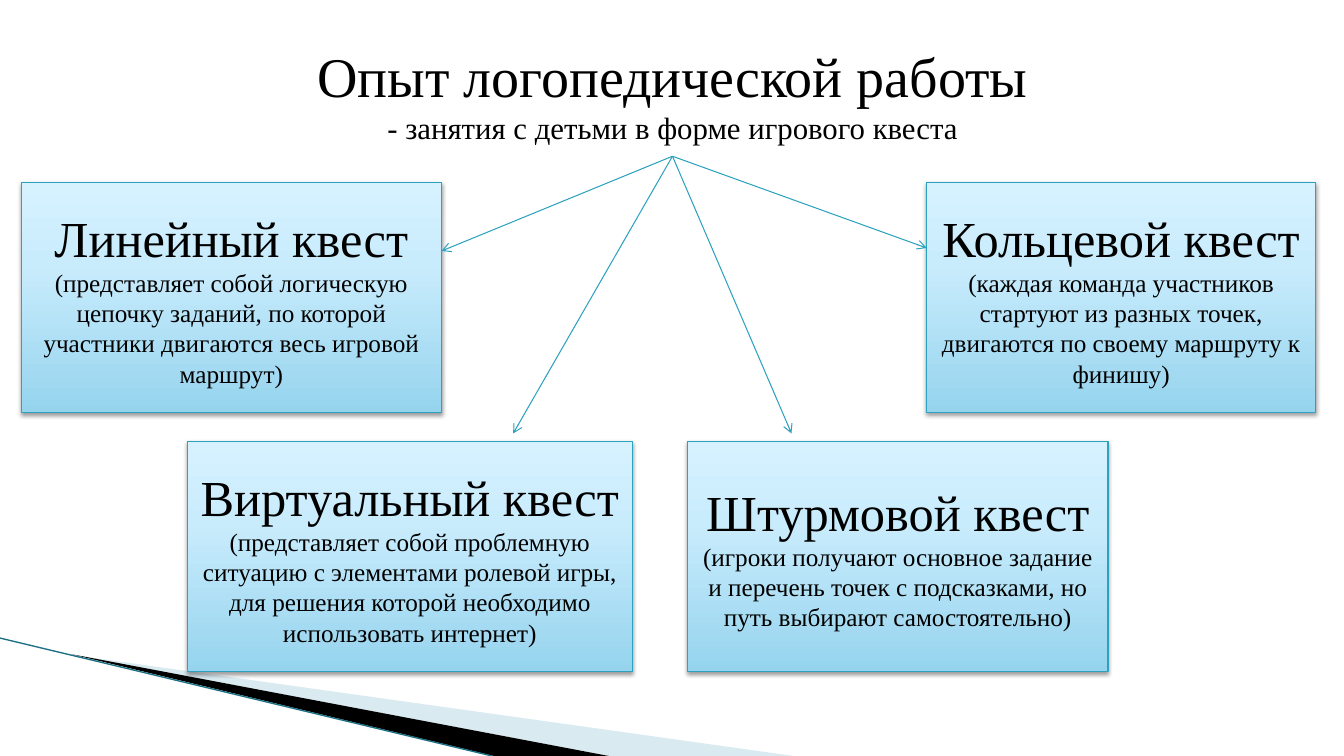
from dataclasses import dataclass

from lxml import etree
from pptx import Presentation
from pptx.dml.color import RGBColor
from pptx.enum.shapes import MSO_CONNECTOR, MSO_SHAPE
from pptx.enum.text import MSO_ANCHOR, PP_ALIGN
from pptx.oxml import parse_xml
from pptx.oxml.ns import nsdecls, qn
from pptx.util import Pt

PX = 9144  # EMU per px, 100 px to the inch
RECT = MSO_SHAPE.RECTANGLE
LINE = MSO_CONNECTOR.STRAIGHT
MIDDLE = MSO_ANCHOR.MIDDLE
CENTER = PP_ALIGN.CENTER
FONT = "Times New Roman"
BLACK = "000000"
TEAL = "2DA2BF"
STOPS = ((0, "96D4EE"), (65, "C9ECFC"), (100, "D7F2FF"))


@dataclass
class Quest:
    left: int
    top: int
    width: int
    name: str
    note: str
    tip: tuple[int, int]  # where the arrow to this quest ends


@dataclass
class Wedge:
    points: list[tuple[int, int]]
    fill: str
    alpha: int


HIGH = 228
START = (667, 155)
QUESTS = [
    Quest(21, 181, 417, "Линейный квест",
          "(представляет собой логическую цепочку заданий, по которой "
          "участники двигаются весь игровой маршрут)", (438, 249)),
    Quest(919, 181, 386, "Кольцевой квест",
          "(каждая команда участников стартуют из разных точек, "
          "двигаются по своему маршруту к финишу)", (919, 246)),
    Quest(682, 438, 417, "Штурмовой квест",
          "(игроки получают основное задание и перечень точек с подсказками, "
          "но путь выбирают самостоятельно)", (785, 430)),
    Quest(186, 438, 441, "Виртуальный квест",
          "(представляет собой проблемную ситуацию с элементами ролевой игры, "
          "для решения которой необходимо использовать интернет)", (509, 430)),
]
WEDGES = [
    Wedge([(73, 650), (787, 750), (604, 750)], "A0CBDC", 40),
    Wedge([(71, 649), (604, 750), (490, 750)], BLACK, 100),
]


def color(code: str) -> RGBColor:
    return RGBColor.from_string(code)


def write(shape, lines: list[tuple[str, int]]) -> None:
    frame = shape.text_frame
    frame.word_wrap = True
    frame.vertical_anchor = MIDDLE
    for i, (text, size) in enumerate(lines):
        para = frame.add_paragraph() if i else frame.paragraphs[0]
        para.text = text
        para.alignment = CENTER
        para.font.name = FONT
        para.font.size = Pt(size)
        para.font.color.rgb = color(BLACK)


def draw_wedge(shapes, wedge: Wedge) -> None:
    first, *rest = wedge.points
    pen = shapes.build_freeform(*first, scale=PX)
    pen.add_line_segments(rest)
    shape = pen.convert_to_shape()
    shape.shadow.inherit = False
    shape.line.fill.background()
    shape.fill.solid()
    shape.fill.fore_color.rgb = color(wedge.fill)
    if wedge.alpha < 100:
        tint = shape.fill._xPr.find(".//" + qn("a:srgbClr"))
        etree.SubElement(tint, qn("a:alpha"), val=str(wedge.alpha * 1000))


def draw_line(shapes, start: tuple[int, int], end: tuple[int, int],
              code: str, width: float, arrow: bool) -> None:
    line = shapes.add_connector(LINE, *(n * PX for n in start + end))
    line.line.color.rgb = color(code)
    line.line.width = Pt(width)
    if arrow:
        etree.SubElement(line.line._get_or_add_ln(), qn("a:tailEnd"), type="arrow")
    etree.SubElement(line._element.spPr, qn("a:effectLst"))


def draw_quest(shapes, quest: Quest) -> None:
    box = shapes.add_shape(RECT, quest.left * PX, quest.top * PX,
                           quest.width * PX, HIGH * PX)
    box.line.color.rgb = color(TEAL)
    box.line.width = Pt(0.75)
    # Gradient runs from the bottom up
    stops = "".join(f'<a:gs pos="{pos * 1000}"><a:srgbClr val="{code}"/></a:gs>'
                    for pos, code in STOPS)
    box.line._get_or_add_ln().addprevious(parse_xml(
        f'<a:gradFill {nsdecls("a")} rotWithShape="1"><a:gsLst>{stops}</a:gsLst>'
        '<a:lin ang="16200000" scaled="0"/></a:gradFill>'))
    # Soft shadow below the box
    box.shadow.inherit = False
    box._element.spPr.find(qn("a:effectLst")).append(parse_xml(
        f'<a:outerShdw {nsdecls("a")} blurRad="{Pt(3.1)}" dist="{Pt(1.6)}" '
        f'dir="5400000" rotWithShape="0"><a:srgbClr val="{BLACK}">'
        '<a:alpha val="38000"/></a:srgbClr></a:outerShdw>'))
    write(box, [(quest.name, 36), (quest.note, 18)])


def main() -> None:
    deck = Presentation()
    deck.slide_width, deck.slide_height = 1333 * PX, 750 * PX
    shapes = deck.slides.add_slide(deck.slide_layouts[6]).shapes

    # Corner decoration
    for wedge in WEDGES:
        draw_wedge(shapes, wedge)
    draw_line(shapes, (0, 633), (488, 750), "1B7083", 0.95, False)

    # Title
    title = shapes.add_textbox(67 * PX, 30 * PX, 1200 * PX, 125 * PX)
    write(title, [("Опыт логопедической работы", 40),
                  ("- занятия с детьми в форме игрового квеста", 22)])

    # Quest boxes, then arrows to them
    for quest in QUESTS:
        draw_quest(shapes, quest)
    for quest in QUESTS:
        draw_line(shapes, START, quest.tip, TEAL, 0.75, True)

    deck.save("out.pptx")


if __name__ == "__main__":
    main()
